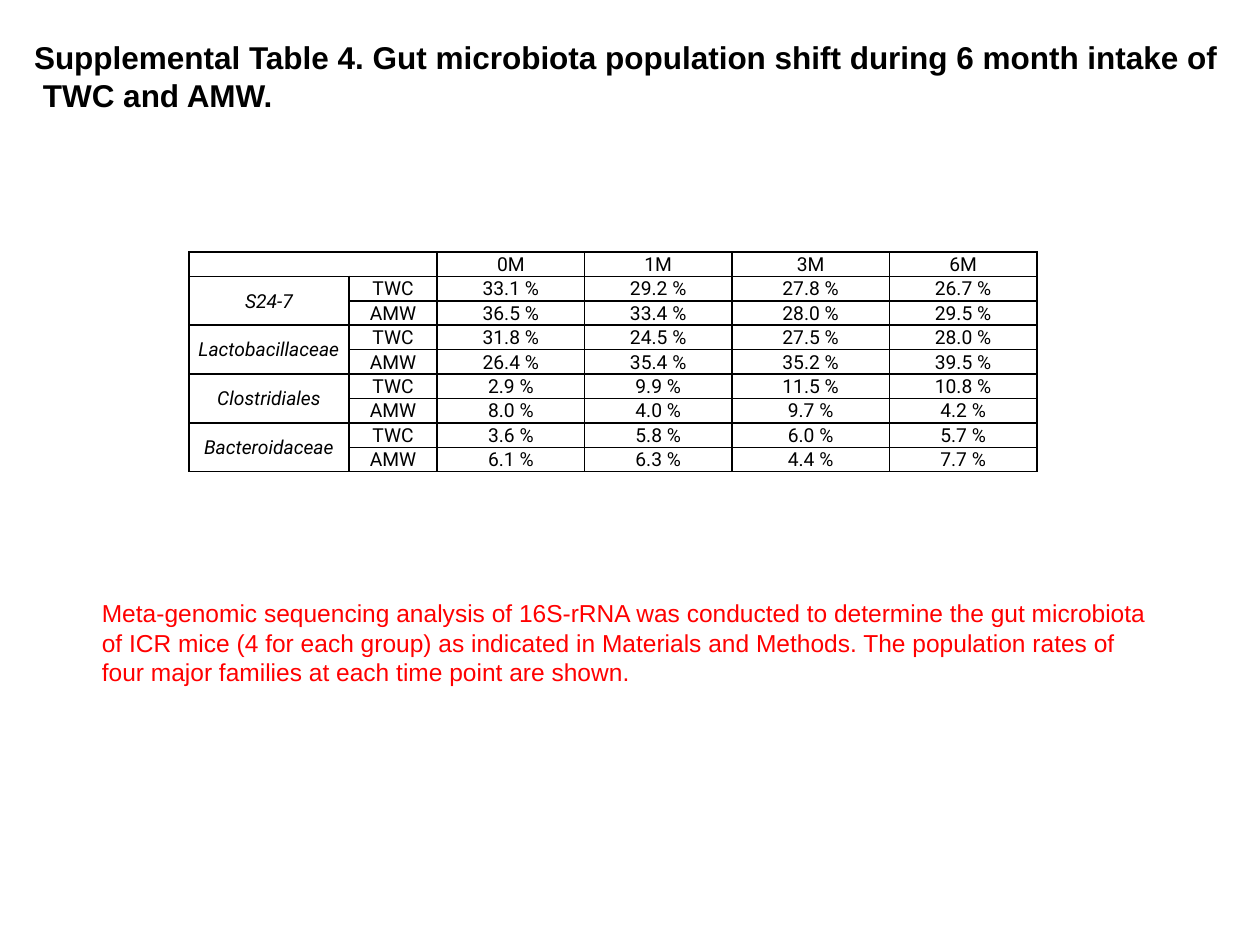
from dataclasses import dataclass

from lxml.etree import SubElement
from pptx import Presentation
from pptx.dml.color import RGBColor
from pptx.enum.text import MSO_ANCHOR, MSO_AUTO_SIZE, PP_ALIGN
from pptx.oxml import parse_xml
from pptx.oxml.ns import nsdecls, qn
from pptx.util import Inches, Pt

COLORS = {"ink": "000000", "note": "FF0000"}
TITLE = ("Supplemental Table 4. Gut microbiota population shift "
         "during 6 month intake of TWC and AMW.")
NOTE = [
    "Meta-genomic sequencing analysis of 16S-rRNA was conducted to determine the gut microbiota",
    "of ICR mice (4 for each group) as indicated in Materials and Methods. The population rates of",
    "four major families at each time point are shown.",
]
MONTHS = ["0M", "1M", "3M", "6M"]
WIDTHS = [1.27, 0.7, 1.17, 1.17, 1.25, 1.17]
HEIGHT = 1.68


@dataclass
class Family:
    name: str
    twc: list[float]
    amw: list[float]


FAMILIES = [
    Family("S24-7", [33.1, 29.2, 27.8, 26.7], [36.5, 33.4, 28.0, 29.5]),
    Family("Lactobacillaceae", [31.8, 24.5, 27.5, 28.0], [26.4, 35.4, 35.2, 39.5]),
    Family("Clostridiales", [2.9, 9.9, 11.5, 10.8], [8.0, 4.0, 9.7, 4.2]),
    Family("Bacteroidaceae", [3.6, 5.8, 6.0, 5.7], [6.1, 6.3, 4.4, 7.7]),
]


def style(item, values: dict) -> None:
    for key, value in values.items():
        setattr(item, key, value)


def write(para, text: str, color: str, align, **font) -> None:
    para.alignment = align
    run = para.add_run()
    run.text = text
    style(run.font, font)
    run.font.color.rgb = RGBColor.from_string(COLORS[color])


def place(shape, left: float, top: float, width: float, height: float) -> None:
    style(shape, {"left": Inches(left), "top": Inches(top),
                  "width": Inches(width), "height": Inches(height)})


def set_frame(shape) -> None:
    style(shape.text_frame, {"word_wrap": True, "vertical_anchor": MSO_ANCHOR.TOP,
                             "auto_size": MSO_AUTO_SIZE.SHAPE_TO_FIT_TEXT})


def add_title(slide) -> None:
    title = slide.shapes.title
    place(title, 0.17, 0.25, 9.67, 0.71)
    set_frame(title)
    para = title.text_frame.paragraphs[0]
    write(para, TITLE, "ink", PP_ALIGN.LEFT, name="Arial", size=Pt(18), bold=True)
    # Hanging indent for the second line
    props = para._p.get_or_add_pPr()
    props.set("marL", str(Inches(0.07)))
    props.set("indent", str(-Inches(0.07)))


def add_note(slide) -> None:
    box = slide.shapes.add_textbox(0, 0, 0, 0)
    place(box, 0.71, 4.7, 8.54, 0.81)
    set_frame(box)
    frame = box.text_frame
    for num, line in enumerate(NOTE):
        para = frame.add_paragraph() if num else frame.paragraphs[0]
        write(para, line, "note", PP_ALIGN.JUSTIFY, name="Arial", size=Pt(14))


def add_borders(cell) -> None:
    props = cell._tc.get_or_add_tcPr()
    for num, side in enumerate(("lnL", "lnR", "lnT", "lnB")):
        props.insert(num, parse_xml(
            f'<a:{side} {nsdecls("a")} w="{Pt(1)}"><a:solidFill>'
            f'<a:srgbClr val="{COLORS["ink"]}"/></a:solidFill></a:{side}>'))


def fill_cell(cell, text: str, italic: bool) -> None:
    edge = Inches(0.01)
    style(cell, {"margin_left": edge, "margin_right": edge, "margin_top": edge,
                 "margin_bottom": 0, "vertical_anchor": MSO_ANCHOR.MIDDLE})
    cell.fill.background()
    add_borders(cell)
    para = cell.text_frame.paragraphs[0]
    if text:
        write(para, text, "ink", PP_ALIGN.CENTER, name="Roboto", size=Pt(11), italic=italic)
    else:
        # An empty cell must not stretch its row
        SubElement(para._p, qn("a:endParaRPr"), sz="1100")


def list_rows() -> list[list[str]]:
    rows = [["", "", *MONTHS]]
    for fam in FAMILIES:
        for name, group, rates in ((fam.name, "TWC", fam.twc), ("", "AMW", fam.amw)):
            rows.append([name, group, *(f"{rate:.1f} %" for rate in rates)])
    return rows


def add_rates(slide) -> None:
    rows = list_rows()
    table = slide.shapes.add_table(
        len(rows), len(WIDTHS), Inches(1.5), Inches(2),
        Inches(sum(WIDTHS)), Inches(HEIGHT)).table
    style(table, {"first_row": False, "horz_banding": False})
    for col, width in zip(table.columns, WIDTHS):
        col.width = Inches(width)
    for y, row in enumerate(rows):
        table.rows[y].height = Inches(HEIGHT / len(rows))
        for x, text in enumerate(row):
            fill_cell(table.cell(y, x), text, italic=x == 0)
    table.cell(0, 0).merge(table.cell(0, 1))
    for y in range(1, len(rows), 2):
        table.cell(y, 0).merge(table.cell(y + 1, 0))


def main() -> None:
    deck = Presentation()
    style(deck, {"slide_width": Inches(10), "slide_height": Inches(7.5)})
    slide = deck.slides.add_slide(deck.slide_layouts[5])
    add_rates(slide)
    add_title(slide)
    add_note(slide)
    deck.save("out.pptx")


if __name__ == "__main__":
    main()
